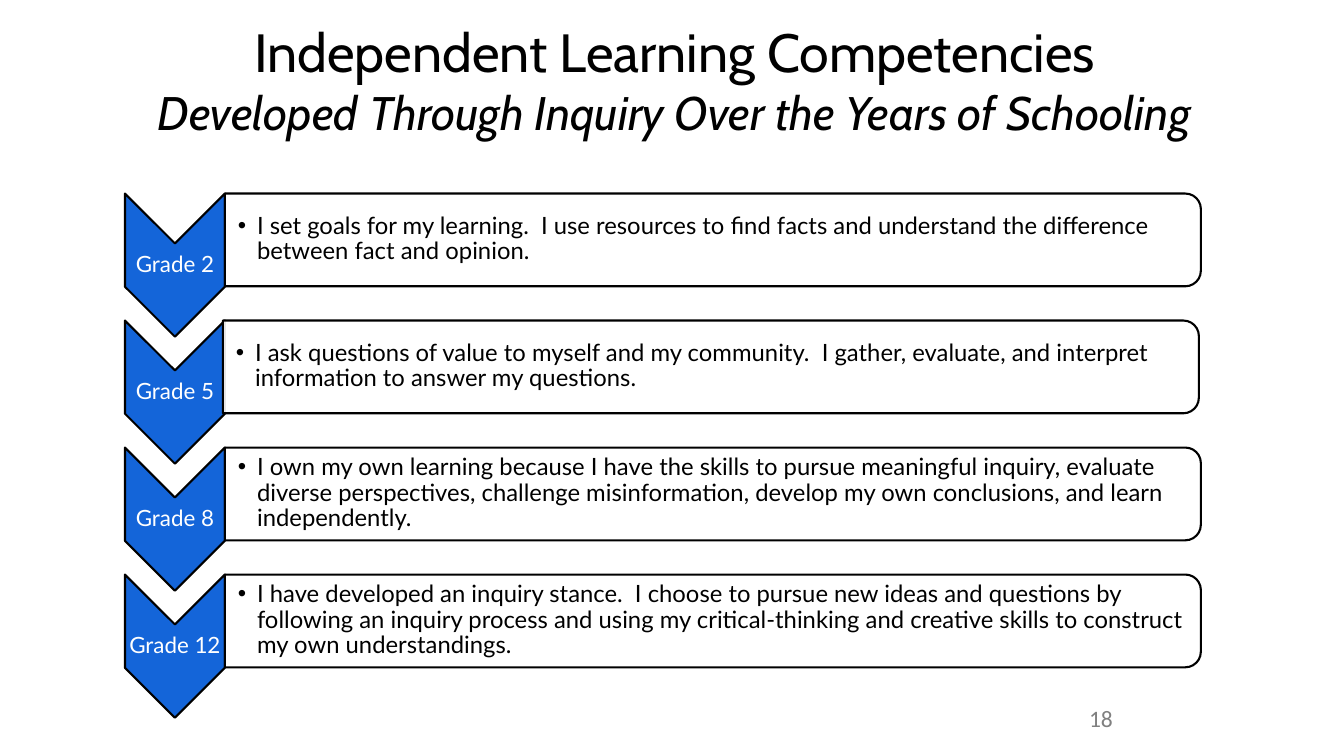
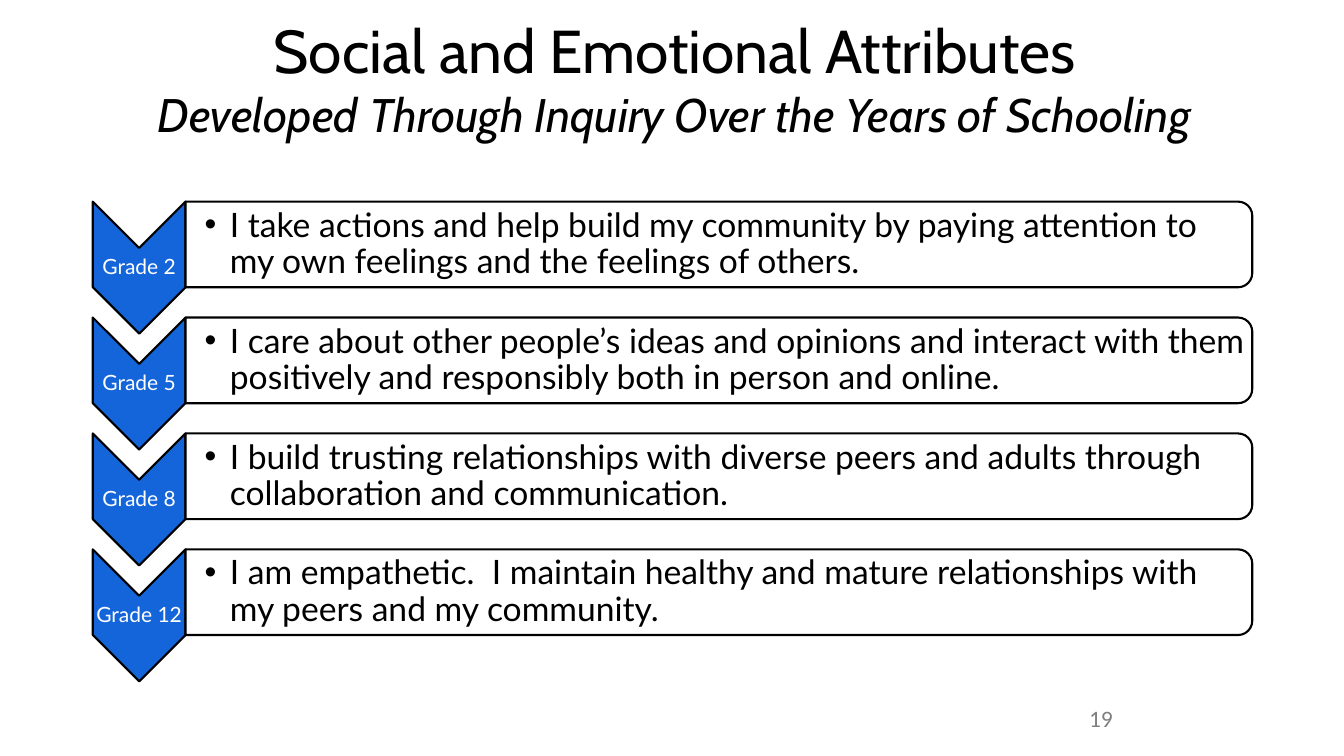
from dataclasses import dataclass

from lxml import etree
from pptx import Presentation
from pptx.dml.color import RGBColor
from pptx.enum.shapes import MSO_SHAPE
from pptx.enum.text import MSO_ANCHOR, MSO_AUTO_SIZE, PP_ALIGN
from pptx.oxml.ns import qn
from pptx.util import Inches, Pt

CHEVRON = MSO_SHAPE.CHEVRON
PANEL = MSO_SHAPE.ROUND_2_SAME_RECTANGLE
BRACKET = MSO_SHAPE.DOUBLE_BRACKET
MIDDLE = MSO_ANCHOR.MIDDLE
CENTER, LEFT = PP_ALIGN.CENTER, PP_ALIGN.LEFT
NO_FIT = MSO_AUTO_SIZE.NONE

# Shared style
BLUE, BLACK, WHITE, GRAY = "1465D9", "000000", "FFFFFF", "808080"
HEAD, BODY, FOOT = "Cabin", "Lato", "Calibri"
SUBTITLE = "Developed Through Inquiry Over the Years of Schooling"
SUB_SIZE = 33.6
GRADES = ("Grade 2", "Grade 5", "Grade 8", "Grade 12")


@dataclass
class Box:
    left: float
    top: float
    width: float
    height: float

    def lengths(self) -> list:
        return [Inches(v) for v in (self.left, self.top, self.width, self.height)]

    def turned(self) -> "Box":
        """Return the frame that fills this box after a quarter turn."""
        gap = (self.width - self.height) / 2
        return Box(self.left + gap, self.top - gap, self.height, self.width)


@dataclass
class Style:
    """Measures of one ladder of grades."""
    left: float
    top: float
    pitch: float
    arrow: float       # chevron width
    tall: float        # chevron height
    width: float       # panel width
    height: float      # panel height
    inner: Box         # text area, relative to its panel
    label: float       # label size
    size: float        # text size
    pad: float         # left inset of the text
    edge: float        # other insets of the text
    indent: float


@dataclass
class Page:
    title: str
    size: float
    frame: Box
    number: str
    style: Style
    lines: tuple
    shifts: tuple = (0, 0, 0, 0)


def color(code: str) -> RGBColor:
    return RGBColor.from_string(code)


def apply(target, values: dict) -> None:
    for name, value in values.items():
        setattr(target, name, value)


def set_font(font, name: str, size: float, code: str) -> None:
    apply(font, {"name": name, "size": Pt(size)})
    font.color.rgb = color(code)


def set_frame(frame, pad: float, edge: float, side: float) -> None:
    apply(frame, {
        "word_wrap": True, "auto_size": NO_FIT, "vertical_anchor": MIDDLE,
        "margin_left": Inches(pad), "margin_right": Inches(side),
        "margin_top": Inches(edge), "margin_bottom": Inches(edge),
    })


def add_form(slide, kind, box: Box, fill: str | None, line: str, turn: int = 0):
    form = slide.shapes.add_shape(kind, *box.lengths())
    form.rotation = turn
    form.shadow.inherit = False
    if fill:
        form.fill.solid()
        form.fill.fore_color.rgb = color(fill)
    else:
        form.fill.background()
    form.line.color.rgb = color(line)
    form.line.width = Pt(1.5)
    return form


def fade(form, share: int) -> None:
    tone = form._element.spPr.find(qn("a:solidFill"))[0]
    etree.SubElement(tone, qn("a:alpha"), val=str(share * 1000))


def add_bullet(para, indent: float) -> None:
    props = para._p.get_or_add_pPr()
    props.set("marL", str(Inches(indent)))
    props.set("indent", str(-Inches(indent)))
    etree.SubElement(props, qn("a:buFont"), typeface="Arial")
    etree.SubElement(props, qn("a:buChar"), char="•")


def add_label(slide, box: Box, text: str, size: float) -> None:
    frame = slide.shapes.add_textbox(*box.lengths()).text_frame
    set_frame(frame, 0.01, 0.01, 0.01)
    para = frame.paragraphs[0]
    apply(para, {"text": text, "alignment": CENTER, "line_spacing": 0.9})
    set_font(para.font, BODY, size, WHITE)


def add_item(slide, box: Box, text: str, style: Style) -> None:
    frame = slide.shapes.add_textbox(*box.lengths()).text_frame
    set_frame(frame, style.pad, style.edge, style.edge)
    para = frame.paragraphs[0]
    add_bullet(para, style.indent)
    apply(para, {"text": text, "alignment": LEFT, "line_spacing": 0.9})
    set_font(para.font, BODY, style.size, BLACK)


def add_row(slide, style: Style, row: int, text: str, shift: float) -> None:
    top = style.top + row * style.pitch
    # Chevron and grade
    arrow = Box(style.left, top, style.arrow, style.tall)
    add_form(slide, CHEVRON, arrow.turned(), BLUE, BLACK, 90)
    label = Box(style.left, top + style.arrow / 2,
                style.arrow, style.tall - style.arrow)
    add_label(slide, label, GRADES[row], style.label)
    # Panel and statement
    panel = Box(style.left + style.arrow + shift, top, style.width, style.height)
    form = add_form(slide, PANEL, panel.turned(), WHITE, BLACK, 90)
    fade(form, 90)
    inner = style.inner
    area = Box(panel.left + inner.left, top + inner.top, inner.width, inner.height)
    add_item(slide, area, text, style)


def add_title(slide, page: Page) -> None:
    title = slide.shapes.title
    apply(title, dict(zip(("left", "top", "width", "height"),
                          page.frame.lengths())))
    set_frame(title.text_frame, 0.1, 0.05, 0.1)
    para = title.text_frame.paragraphs[0]
    para.alignment = CENTER
    main_run = para.add_run()
    main_run.text = page.title
    para.add_line_break()
    sub = para.add_run()
    sub.text = SUBTITLE
    for run, size in ((main_run, page.size), (sub, SUB_SIZE)):
        set_font(run.font, HEAD, size, BLACK)
    sub.font.italic = True


def add_number(slide, text: str) -> None:
    form = add_form(slide, BRACKET, Box(9.42, 6.95, 3, 0.4), None, WHITE)
    set_frame(form.text_frame, 0, 0, 0)
    para = form.text_frame.paragraphs[0]
    apply(para, {"text": text, "alignment": CENTER, "line_spacing": 0.8})
    set_font(para.font, FOOT, 16.8, GRAY)


def add_page(deck, page: Page) -> None:
    slide = deck.slides.add_slide(deck.slide_layouts[5])
    add_title(slide, page)
    for row, (text, shift) in enumerate(zip(page.lines, page.shifts)):
        add_row(slide, page.style, row, text, shift)
    add_number(slide, page.number)


PAGES = (
    Page(
        "Independent Learning Competencies", 38.4,
        Box(0.96, 0.15, 11.46, 1.28), "18",
        Style(left=1.24, top=1.92, pitch=1.26, arrow=0.99, tall=1.42,
              width=9.68, height=0.92, inner=Box(0, 0.04, 9.63, 0.83),
              label=16, size=17, pad=0.13, edge=0.01, indent=0.19),
        (
            "I set goals for my learning.  I use resources to find facts and "
            "understand the difference between fact and opinion.",
            "I ask questions of value to myself and my community.  I gather, "
            "evaluate, and interpret information to answer my questions.",
            "I own my own learning because I have the skills to pursue "
            "meaningful inquiry, evaluate diverse perspectives, challenge "
            "misinformation, develop my own conclusions, and learn "
            "independently.",
            "I have developed an inquiry stance.  I choose to pursue new ideas "
            "and questions by following an inquiry process and using my "
            "critical-thinking and creative skills to construct my own "
            "understandings.",
        ),
        (0, -0.02, 0, 0),
    ),
    Page(
        "Social and Emotional Attributes", 43.2,
        Box(0.96, 0.1, 11.46, 1.33), "19",
        Style(left=0.92, top=2, pitch=1.15, arrow=0.92, tall=1.31,
              width=10.58, height=0.85, inner=Box(0, 0.04, 10.54, 0.77),
              label=15, size=24, pad=0.19, edge=0.02, indent=0.25),
        (
            "I take actions and help build my community by paying attention to "
            "my own feelings and the feelings of others.",
            "I care about other people’s ideas and opinions and interact with "
            "them positively and responsibly both in person and online.",
            "I build trusting relationships with diverse peers and adults "
            "through collaboration and communication.",
            "I am empathetic.  I maintain healthy and mature relationships "
            "with my peers and my community.",
        ),
    ),
)


def main() -> None:
    deck = Presentation()
    apply(deck, {"slide_width": Inches(13.33), "slide_height": Inches(7.5)})
    for page in PAGES:
        add_page(deck, page)
    deck.save("out.pptx")


if __name__ == "__main__":
    main()
